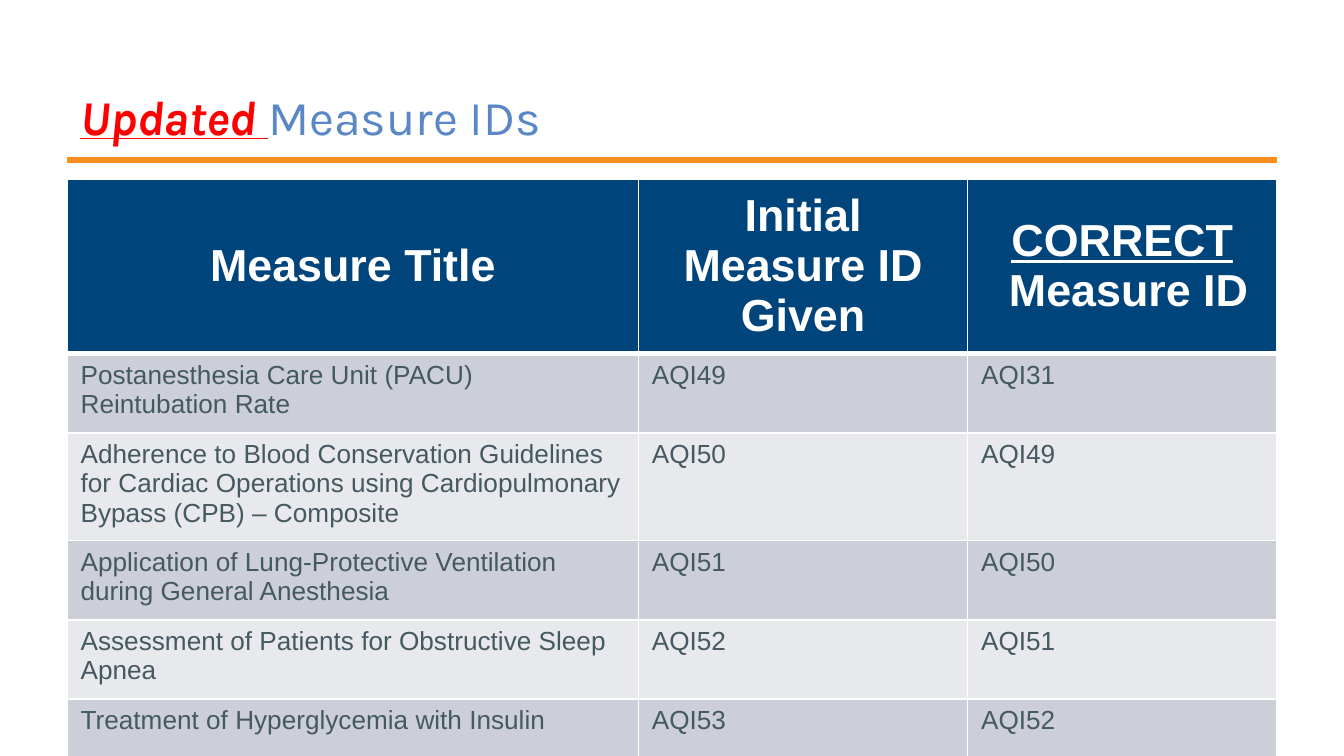
from dataclasses import dataclass

from lxml.etree import SubElement
from pptx import Presentation
from pptx.dml.color import RGBColor
from pptx.enum.shapes import MSO_CONNECTOR
from pptx.enum.text import MSO_ANCHOR, PP_ALIGN
from pptx.oxml.ns import qn
from pptx.util import Pt


@dataclass(frozen=True)
class Theme:
    title_font: str = "Karla"
    body_font: str = "Arial"
    title_size: float = 26
    head_size: float = 24
    body_size: float = 14
    alert: str = "FF0000"
    title: str = "5A87C5"
    rule: str = "F78E1E"
    head_fill: str = "00447C"
    white: str = "FFFFFF"
    text: str = "455960"
    bands: tuple = ("CCCFD7", "E7E9EC")


THEME = Theme()
COL_WIDTHS = (306, 176.4, 165.6)
HEAD_HEIGHT, ROW_HEIGHT = 31.7, 42.5
HEADERS = (("Measure Title",), ("Initial Measure ID Given",), ("CORRECT", " Measure ID"))
MEASURES = (
    ("Postanesthesia Care Unit (PACU) Reintubation Rate", "AQI49", "AQI31"),
    ("Adherence to Blood Conservation Guidelines for Cardiac Operations using "
     "Cardiopulmonary Bypass (CPB) – Composite", "AQI50", "AQI49"),
    ("Application of Lung-Protective Ventilation during General Anesthesia", "AQI51", "AQI50"),
    ("Assessment of Patients for Obstructive Sleep Apnea", "AQI52", "AQI51"),
    ("Treatment of Hyperglycemia with Insulin", "AQI53", "AQI52"),
)


def add_text(p, text, *, font=THEME.body_font, size=THEME.body_size, color=THEME.text,
             bold=False, italic=False, underline=False, align=PP_ALIGN.LEFT):
    p.alignment = align
    r = p.add_run()
    r.text = text
    f = r.font
    f.name, f.size = font, Pt(size)
    f.bold, f.italic, f.underline = bold, italic, underline
    f.color.rgb = RGBColor.from_string(color)


def style_cell(cell, fill, bottom=1):
    tc_pr = cell._tc.get_or_add_tcPr()
    for side, width in (("L", 1), ("R", 1), ("T", 1), ("B", bottom)):
        ln = SubElement(tc_pr, qn(f"a:ln{side}"), w=str(Pt(width)))
        SubElement(SubElement(ln, qn("a:solidFill")), qn("a:srgbClr"), val=THEME.white)
    cell.fill.solid()
    cell.fill.fore_color.rgb = RGBColor.from_string(fill)


def add_title(s, x, y, w, h):
    tf = s.shapes.add_textbox(Pt(x), Pt(y), Pt(w), Pt(h)).text_frame
    tf.word_wrap = True
    tf.vertical_anchor = MSO_ANCHOR.BOTTOM
    p = tf.paragraphs[0]
    base = {"font": THEME.title_font, "size": THEME.title_size}
    add_text(p, "Updated ", color=THEME.alert, bold=True, italic=True, underline=True, **base)
    add_text(p, "Measure IDs", color=THEME.title, **base)

    rule_y = Pt(y + h + 4.3)
    rule = s.shapes.add_connector(MSO_CONNECTOR.STRAIGHT, Pt(x), rule_y, Pt(x + w), rule_y)
    rule.line.color.rgb = RGBColor.from_string(THEME.rule)
    rule.line.width = Pt(3)
    SubElement(rule._element.spPr, qn("a:effectLst"))


def add_measures(s, x, y):
    height = HEAD_HEIGHT + ROW_HEIGHT * len(MEASURES)
    table = s.shapes.add_table(len(MEASURES) + 1, len(COL_WIDTHS), Pt(x), Pt(y),
                               Pt(sum(COL_WIDTHS)), Pt(height)).table
    for col, width in zip(table.columns, COL_WIDTHS):
        col.width = Pt(width)
    for i, row in enumerate(table.rows):
        row.height = Pt(ROW_HEIGHT if i else HEAD_HEIGHT)

    for c, lines in enumerate(HEADERS):
        cell = table.cell(0, c)
        style_cell(cell, THEME.head_fill, bottom=3)
        cell.vertical_anchor = MSO_ANCHOR.MIDDLE
        tf = cell.text_frame
        for i, line in enumerate(lines):
            p = tf.add_paragraph() if i else tf.paragraphs[0]
            add_text(p, line, size=THEME.head_size, color=THEME.white, bold=True,
                     underline=line == "CORRECT", align=PP_ALIGN.CENTER)

    for i, measure in enumerate(MEASURES):
        for c, text in enumerate(measure):
            cell = table.cell(i + 1, c)
            style_cell(cell, THEME.bands[i % 2])
            add_text(cell.text_frame.paragraphs[0], text)


def main():
    prs = Presentation()
    prs.slide_width, prs.slide_height = Pt(720), Pt(405)
    s = prs.slides.add_slide(prs.slide_layouts[6])
    add_title(s, 36, 26.6, 648, 54.7)
    add_measures(s, 36, 95.8)
    prs.save("out.pptx")


if __name__ == "__main__":
    main()
